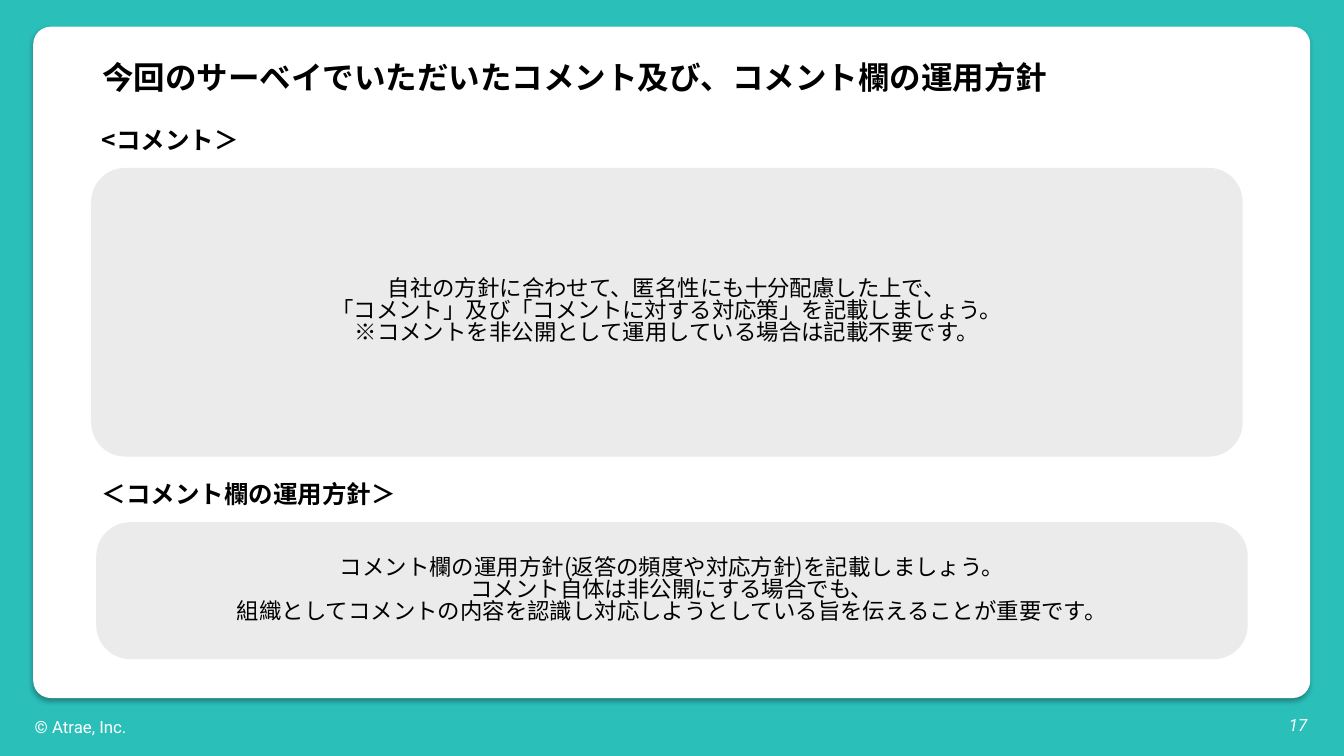
"""Build the slide on survey comments and the policy for the comment field."""
import lxml.etree
import pptx
import pptx.dml.color
import pptx.enum.shapes
import pptx.enum.text
import pptx.oxml
import pptx.oxml.ns
import pptx.util

Inches = pptx.util.Inches
Align = pptx.enum.text.PP_ALIGN
Anchor = pptx.enum.text.MSO_ANCHOR
Fit = pptx.enum.text.MSO_AUTO_SIZE
Preset = pptx.enum.shapes.MSO_SHAPE
qn = pptx.oxml.ns.qn

SIZE = (26.67, 15)
INSET = 0.06
THEME = {
    "teal": "2BBFBA", "white": "FFFFFF", "gray": "EBEBEB", "black": "000000",
    "sans": "Noto Sans CJK JP", "latin": "Roboto", "leading": 0.82,
    "title": 45, "heading": 35, "body": 32, "footer": 24,
}
STYLES = {
    "title": {"size": THEME["title"], "bold": True},
    "heading": {"size": THEME["heading"], "bold": True},
    "body": {"size": THEME["body"]},
    "footer": {"size": THEME["footer"], "name": THEME["latin"], "color": THEME["white"]},
    "number": {"size": THEME["footer"], "name": THEME["latin"], "color": THEME["white"],
               "italic": True},
}
LABELS = [
    ("今回のサーベイでいただいたコメント及び、コメント欄の運用方針", "title",
     (1.85, 1.16, 19.1, 0.87), Align.CENTER, Anchor.MIDDLE, False),
    ("<コメント＞", "heading", (1.96, 2.48, 21.47, 0.7), Align.LEFT, Anchor.MIDDLE, True),
    ("＜コメント欄の運用方針＞", "heading", (1.96, 9.49, 21.47, 0.7),
     Align.LEFT, Anchor.MIDDLE, True),
    ("© Atrae, Inc.", "footer", (0.63, 14.13, 2, 0.57), Align.LEFT, Anchor.MIDDLE, False),
    ("17", "number", (25.48, 14.13, 0.52, 0.57), Align.RIGHT, Anchor.TOP, False),
]
PANELS = [
    ((1.81, 3.33, 22.85, 5.73), 0.118, [
        "自社の方針に合わせて、匿名性にも十分配慮した上で、",
        "「コメント」及び「コメントに対する対応策」を記載しましょう。",
        "※コメントを非公開として運用している場合は記載不要です。",
    ]),
    ((1.91, 10.36, 22.85, 2.72), 0.249, [
        "コメント欄の運用方針(返答の頻度や対応方針)を記載しましょう。",
        "コメント自体は非公開にする場合でも、",
        "組織としてコメントの内容を認識し対応しようとしている旨を伝えることが重要です。",
    ]),
]


def rgb(value):
    """Turn a hex string into a colour."""
    return pptx.dml.color.RGBColor.from_string(value)


def write(box, lines, style, align, anchor, wrap, inset, fit):
    """Fill a box with one formatted paragraph per line."""
    frame = box.text_frame
    settings = {"word_wrap": wrap, "vertical_anchor": anchor, "auto_size": fit}
    settings.update({f"margin_{side}": Inches(inset)
                     for side in ("left", "top", "right", "bottom")})
    for name, value in settings.items():
        setattr(frame, name, value)
    form = {"name": THEME["sans"], "color": THEME["black"], **STYLES[style]}
    color = form.pop("color")
    form["size"] = pptx.util.Pt(form["size"])
    for index, line in enumerate(lines):
        para = frame.add_paragraph() if index else frame.paragraphs[0]
        para.alignment = align
        if form["name"] == THEME["sans"]:
            para.line_spacing = THEME["leading"]
        span = para.add_run()
        span.text = line
        for name, value in form.items():
            setattr(span.font, name, value)
        span.font.color.rgb = rgb(color)
        east = lxml.etree.SubElement(span.font._element, qn("a:ea"))
        east.set("typeface", form["name"])


def add_block(page, preset, place, fill, corner=None):
    """Add a plain filled shape."""
    box = page.shapes.add_shape(preset, *map(Inches, place))
    box.shadow.inherit = False
    box.fill.solid()
    box.fill.fore_color.rgb = rgb(fill)
    box.line.fill.background()
    if corner is not None:
        box.adjustments[0] = corner
    return box


def add_shadow(box, color, opacity, blur, distance, angle):
    """Give a shape a soft outer shadow."""
    effects = box._element.spPr.find(qn("a:effectLst"))
    shadow = lxml.etree.SubElement(effects, qn("a:outerShdw"))
    values = {"blurRad": pptx.util.Pt(blur), "dist": pptx.util.Pt(distance),
              "dir": angle * 60000, "algn": "bl", "rotWithShape": 0}
    for name, value in values.items():
        shadow.set(name, str(value))
    tint = lxml.etree.SubElement(shadow, qn("a:srgbClr"), val=color)
    lxml.etree.SubElement(tint, qn("a:alpha"), val=str(opacity * 1000))


def main():
    """Build and save the deck."""
    deck = pptx.Presentation()
    deck.slide_width, deck.slide_height = map(Inches, SIZE)
    page = deck.slides.add_slide(deck.slide_layouts[6])
    add_block(page, Preset.RECTANGLE, (0, 0, *SIZE), THEME["teal"])
    card = add_block(page, Preset.ROUNDED_RECTANGLE, (0.66, 0.53, 25.34, 13.32),
                     THEME["white"], 0.026)
    add_shadow(card, THEME["black"], 30, 8, 5, 90)
    for text, style, place, align, anchor, wrap in LABELS:
        box = page.shapes.add_textbox(*map(Inches, place))
        write(box, [text], style, align, anchor, wrap, INSET, Fit.SHAPE_TO_FIT_TEXT)
    for place, corner, lines in PANELS:
        box = add_block(page, Preset.ROUNDED_RECTANGLE, place, THEME["gray"], corner)
        write(box, lines, "body", Align.CENTER, Anchor.MIDDLE, True, 0, Fit.NONE)
    deck.save("out.pptx")


if __name__ == "__main__":
    main()
